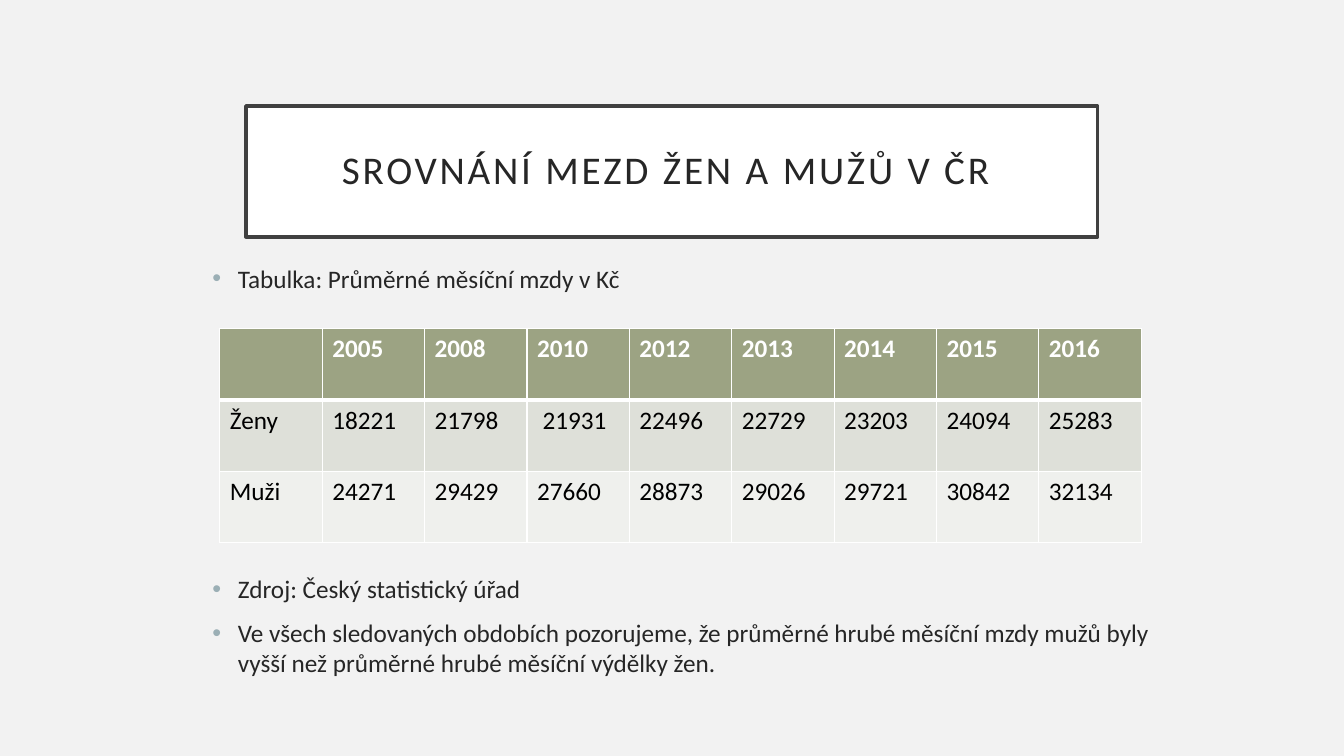
from lxml.etree import SubElement
from pptx import Presentation
from pptx.dml.color import RGBColor
from pptx.enum.text import MSO_ANCHOR, MSO_AUTO_SIZE, PP_ALIGN
from pptx.oxml.ns import qn
from pptx.util import Cm, Pt

# Content
TITLE = "SROVNÁNÍ MEZD ŽEN A MUŽŮ V ČR "
# Each bullet with its space before, in points; the table stands in the large gap
BULLETS = [
    ("Tabulka: Průměrné měsíční mzdy v Kč", 10),
    ("Zdroj: Český statistický úřad", 200),
    ("Ve všech sledovaných obdobích pozorujeme, že průměrné hrubé měsíční mzdy "
     "mužů byly vyšší než průměrné hrubé měsíční výdělky žen.", 10),
]
WAGES = [
    ["", "2005", "2008", "2010", "2012", "2013", "2014", "2015", "2016"],
    ["Ženy", "18221", "21798", " 21931", "22496", "22729", "23203", "24094", "25283"],
    ["Muži", "24271", "29429", "27660", "28873", "29026", "29721", "30842", "32134"],
]

# Colours and formats
BACKGROUND = RGBColor(0xF2, 0xF2, 0xF2)
WHITE = RGBColor(0xFF, 0xFF, 0xFF)
BLACK = RGBColor(0, 0, 0)
DARK = RGBColor(0x26, 0x26, 0x26)
FRAME = RGBColor(0x40, 0x40, 0x40)
BULLET = RGBColor(0x9B, 0xAF, 0xB5)
ROW_FILLS = [RGBColor(0x9C, 0xA3, 0x83), RGBColor(0xDE, 0xE0, 0xD9),
             RGBColor(0xEF, 0xF0, 0xED)]

TITLE_FONT = {"name": "Calibri", "size": Pt(28), "bold": False}
BODY_FONT = {"name": "Calibri", "size": Pt(18), "bold": False}
HEADER_FONT = BODY_FONT | {"bold": True}
COLUMN_WIDTH, ROW_HEIGHT = Cm(2.58), Cm(1.8)


def place(shape, left, top, width, height):
    box = {"left": left, "top": top, "width": width, "height": height}
    for name, value in box.items():
        setattr(shape, name, Cm(value))


def add_run(paragraph, text, font_format, color):
    run = paragraph.add_run()
    run.text = text
    for name, value in font_format.items():
        setattr(run.font, name, value)
    run.font.color.rgb = color
    return run


def add_color(parent, color):
    SubElement(parent, qn("a:srgbClr"), val=str(color))


def set_bullet(paragraph):
    properties = paragraph._p.get_or_add_pPr()
    properties.set("marL", str(Cm(0.64)))
    properties.set("indent", str(-Cm(0.64)))
    add_color(SubElement(properties, qn("a:buClr")), BULLET)
    SubElement(properties, qn("a:buFont"), typeface="Arial")
    SubElement(properties, qn("a:buChar"), char="•")


def set_borders(cell, widths):
    properties = cell._tc.get_or_add_tcPr()
    for side, width in widths.items():
        line = SubElement(properties, qn(f"a:ln{side}"), w=str(Pt(width)))
        add_color(SubElement(line, qn("a:solidFill")), WHITE)


presentation = Presentation()
presentation.slide_width, presentation.slide_height = Cm(33.87), Cm(19.05)
slide = presentation.slides.add_slide(presentation.slide_layouts[1])
slide.background.fill.solid()
slide.background.fill.fore_color.rgb = BACKGROUND

# Framed title
title = slide.shapes.title
place(title, 6.2, 2.67, 21.46, 3.3)
title.fill.solid()
title.fill.fore_color.rgb = WHITE
title.line.color.rgb = FRAME
title.line.width = Pt(2.5)
title_frame = title.text_frame
title_frame.auto_size = MSO_AUTO_SIZE.NONE
title_frame.vertical_anchor = MSO_ANCHOR.MIDDLE
for side in ("left", "top", "right", "bottom"):
    setattr(title_frame, f"margin_{side}", Cm(0.5))
heading = title_frame.paragraphs[0]
heading.alignment = PP_ALIGN.CENTER
heading.line_spacing = 0.9
title_run = add_run(heading, TITLE, TITLE_FONT, DARK)
title_run.font._element.set("spc", "200")

# Bullets above and below the table
body = slide.placeholders[1]
place(body, 5.1, 6.5, 24.3, 11.96)
body_frame = body.text_frame
body_frame.auto_size = MSO_AUTO_SIZE.NONE
for index, (text, space) in enumerate(BULLETS):
    paragraph = body_frame.add_paragraph() if index else body_frame.paragraphs[0]
    paragraph.space_before = Pt(space)
    set_bullet(paragraph)
    add_run(paragraph, text, BODY_FONT, DARK)

# Wage table
row_count, column_count = len(WAGES), len(WAGES[0])
table = slide.shapes.add_table(
    row_count, column_count, Cm(5.54), Cm(8.28),
    COLUMN_WIDTH * column_count, ROW_HEIGHT * row_count).table
for column in table.columns:
    column.width = COLUMN_WIDTH
for row_index, (row, values) in enumerate(zip(table.rows, WAGES)):
    row.height = ROW_HEIGHT
    is_header = row_index == 0
    widths = {"L": 1, "R": 1, "T": 3 if row_index == 1 else 1, "B": 3 if is_header else 1}
    for cell, value in zip(row.cells, values):
        set_borders(cell, widths)
        cell.fill.solid()
        cell.fill.fore_color.rgb = ROW_FILLS[row_index]
        if value:
            add_run(cell.text_frame.paragraphs[0], value,
                    HEADER_FONT if is_header else BODY_FONT,
                    WHITE if is_header else BLACK)

presentation.save("out.pptx")
